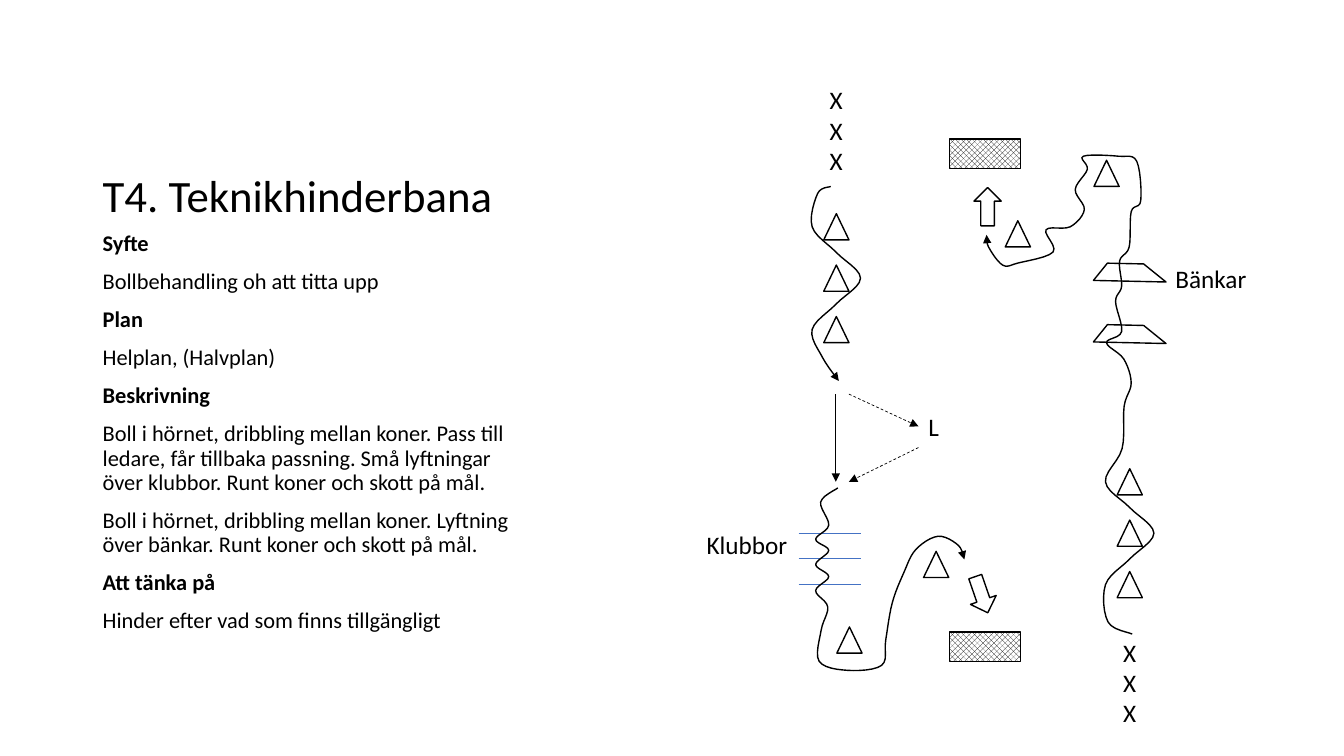
from itertools import pairwise

from lxml.etree import SubElement
from pptx import Presentation
from pptx.dml.color import RGBColor
from pptx.enum.dml import MSO_LINE, MSO_PATTERN
from pptx.enum.shapes import MSO_CONNECTOR, MSO_SHAPE as SHAPE
from pptx.enum.text import MSO_ANCHOR as ANCHOR, MSO_AUTO_SIZE as AUTO_SIZE
from pptx.oxml.ns import qn
from pptx.util import Inches, Pt

COLORS = {"ink": "000000", "paper": "FFFFFF", "stick": "4472C4"}
FONT = "Calibri"

DESCRIPTION = [
    ("Syfte", ["Bollbehandling oh att titta upp"]),
    ("Plan", ["Helplan, (Halvplan)"]),
    ("Beskrivning", [
        "Boll i hörnet, dribbling mellan koner. Pass till ledare, får tillbaka passning. "
        "Små lyftningar över klubbor. Runt koner och skott på mål.",
        "Boll i hörnet, dribbling mellan koner. Lyftning över bänkar. "
        "Runt koner och skott på mål."]),
    ("Att tänka på", ["Hinder efter vad som finns tillgängligt"]),
]

# Obstacles are given by left and top, in inches.
CONE_SIZE = (0.25, 0.26)
CONE_STEP = 0.51
LEFT_COLUMN = [(8.17, 2.12 + i * CONE_STEP) for i in range(3)]
RIGHT_COLUMN = [(11.08, 4.65 + i * CONE_STEP) for i in range(3)]
LOW_CONE, LOW_SHOT_CONE = (8.3, 6.22), (9.16, 5.47)
HIGH_CONE, HIGH_SHOT_CONE = (10.85, 1.59), (9.97, 2.19)
CONES = LEFT_COLUMN + RIGHT_COLUMN + [LOW_CONE, LOW_SHOT_CONE, HIGH_CONE, HIGH_SHOT_CONE]

BENCH_SIZE = (0.57, 0.44)
UPPER_BENCH, LOWER_BENCH = (10.92, 2.57), (10.92, 3.18)

STICK_LEFT, STICK_RIGHT = 7.92, 8.54
STICKS = [5.29, 5.54, 5.8]

SWING = 0.24       # how far a slalom swings out from the cones
CURVE_STEPS = 6    # line pieces between two waypoints


def rgb(name):
    return RGBColor.from_string(COLORS[name])


def around(corner, size, *offsets):
    """Waypoints given as offsets from the centre of an obstacle."""
    (left, top), (width, height) = corner, size
    return [(left + width / 2 + dx, top + height / 2 + dy) for dx, dy in offsets]


def slalom(cones):
    """Pass the cones left, right, left, crossing midway between neighbours."""
    sides = [around(cone, CONE_SIZE, (SWING if i % 2 else -SWING, 0))[0]
             for i, cone in enumerate(cones)]
    waypoints = sides[:1]
    for (x1, y1), (x2, y2) in pairwise(sides):
        waypoints += [((x1 + x2) / 2, (y1 + y2) / 2), (x2, y2)]
    return waypoints


def zigzag_over_sticks():
    """Swing right just above each stick and left just below it."""
    return [point for y in STICKS for point in ((8.22, y - 0.08), (8.09, y + 0.06))]


def smooth(waypoints):
    """Points of a Catmull-Rom curve through all waypoints."""
    padded = [waypoints[0], *waypoints, waypoints[-1]]
    curve = [waypoints[0]]
    for a, b, c, d in zip(padded, padded[1:], padded[2:], padded[3:]):
        for step in range(1, CURVE_STEPS + 1):
            t = step / CURVE_STEPS
            curve.append(tuple(
                q + t / 2 * (r - p + t * (2 * p - 5 * q + 4 * r - s
                                          + t * (3 * q - p - 3 * r + s)))
                for p, q, r, s in zip(a, b, c, d)))
    return curve


def left_start_run():
    return [(8.24, 1.85), (8.11, 1.92), *slalom(LEFT_COLUMN), (8.16, 3.55), (8.32, 3.78)]


def left_shot_run():
    round_low_cone = around(LOW_CONE, CONE_SIZE, (-0.28, -0.1), (-0.3, 0.21),
                            (-0.02, 0.3), (0.32, 0.25), (0.36, 0))
    to_shot = around(LOW_SHOT_CONE, CONE_SIZE, (-0.32, 0.08), (-0.2, -0.15),
                     (0.02, -0.28), (0.22, -0.19), (0.28, -0.05))
    return [(8.31, 4.84), (8.14, 4.98), *zigzag_over_sticks(), (8.21, 6.02),
            *round_low_cone, (8.85, 5.98), *to_shot]


def right_run():
    over_lower = around(LOWER_BENCH, BENCH_SIZE, (-0.06, 0.16), (-0.23, 0), (-0.08, -0.11))
    over_upper = around(UPPER_BENCH, BENCH_SIZE, (-0.14, 0.2), (-0.08, 0.05), (-0.1, -0.2))
    round_high_cone = around(HIGH_CONE, CONE_SIZE, (0.34, 0.27), (0.3, -0.12), (0.12, -0.17),
                             (-0.23, -0.17), (-0.19, -0.04), (-0.31, 0.16), (-0.22, 0.36))
    to_shot = around(HIGH_SHOT_CONE, CONE_SIZE, (0.52, -0.07), (0.28, -0.04), (0.35, 0.18),
                     (0, 0.29), (-0.15, 0.31), (-0.29, 0.13), (-0.31, 0.01))
    return [(11.23, 6.29), (10.99, 6.17), *slalom(RIGHT_COLUMN[::-1]), (11.13, 4.45),
            (11.15, 4.03), (11.22, 3.8), *over_lower, *over_upper, (11.2, 2.45),
            (11.22, 2.1), *round_high_cone, *to_shot]


def add_arrowhead(line):
    """Put a triangle at the far end of a line whose width and colour are set."""
    SubElement(line._get_or_add_ln(), qn("a:tailEnd"), type="triangle")


def add_text(slide, paragraphs, left, top, width, height, size=18, bold_lines=(),
             wrap=False, anchor=ANCHOR.TOP, spacing=None, before=None):
    box = slide.shapes.add_textbox(Inches(left), Inches(top), Inches(width), Inches(height))
    frame = box.text_frame
    frame.word_wrap = wrap
    frame.auto_size = AUTO_SIZE.NONE if wrap else AUTO_SIZE.SHAPE_TO_FIT_TEXT
    frame.vertical_anchor = anchor
    for i, words in enumerate(paragraphs):
        paragraph = frame.add_paragraph() if i else frame.paragraphs[0]
        paragraph.line_spacing, paragraph.space_before = spacing, before
        run = paragraph.add_run()
        run.text = words
        run.font.name, run.font.size = FONT, Pt(size)
        run.font.bold = words in bold_lines
        run.font.color.rgb = rgb("ink")
    return box


def add_outlined(slide, kind, corner, size, rotation=0):
    shape = slide.shapes.add_shape(kind, *map(Inches, (*corner, *size)))
    shape.rotation = rotation
    shape.shadow.inherit = False
    shape.fill.solid()
    shape.fill.fore_color.rgb = rgb("paper")
    shape.line.color.rgb = rgb("ink")
    shape.line.width = Pt(1)
    return shape


def add_goal(slide, top):
    fill = add_outlined(slide, SHAPE.RECTANGLE, (9.42, top), (0.7, 0.29)).fill
    fill.patterned()
    fill.pattern = MSO_PATTERN.OUTLINED_DIAMOND
    fill.fore_color.rgb, fill.back_color.rgb = rgb("ink"), rgb("paper")


def add_dribble(slide, waypoints):
    """Draw the winding run of a player with the ball."""
    start, *rest = [(Inches(x), Inches(y)) for x, y in smooth(waypoints)]
    builder = slide.shapes.build_freeform(*start)
    builder.add_line_segments(rest, close=False)
    run = builder.convert_to_shape()
    run.shadow.inherit = False
    run.fill.background()
    run.line.color.rgb = rgb("ink")
    run.line.width = Pt(1)
    add_arrowhead(run.line)


def add_line(slide, x1, y1, x2, y2, color="ink", dashed=False, arrow=True):
    connector = slide.shapes.add_connector(
        MSO_CONNECTOR.STRAIGHT, *map(Inches, (x1, y1, x2, y2)))
    connector.line.color.rgb = rgb(color)
    connector.line.width = Pt(0.5)
    if dashed:
        connector.line.dash_style = MSO_LINE.DASH
    if arrow:
        add_arrowhead(connector.line)
    SubElement(connector._element.spPr, qn("a:effectLst"))
    return connector


def main():
    deck = Presentation()
    deck.slide_width, deck.slide_height = Inches(13.33), Inches(7.5)
    slide = deck.slides.add_slide(deck.slide_layouts[6])

    add_text(slide, ["T4. Teknikhinderbana"], 0.92, 0.5, 4.3, 1.75, size=32, wrap=True,
             anchor=ANCHOR.BOTTOM, spacing=0.9)
    headings = [heading for heading, _ in DESCRIPTION]
    lines = [line for heading, body in DESCRIPTION for line in (heading, *body)]
    add_text(slide, lines, 0.92, 2.25, 4.3, 4.17, size=16, bold_lines=headings, wrap=True,
             spacing=0.9, before=Pt(10))

    for left, top in ((8.13, 0.79), (11.04, 6.27)):
        add_text(slide, ["X"] * 3, left, top, 0.33, 1.01)
    leader = add_text(slide, ["L"], 9.11, 4.03, 0.31, 0.4)
    add_text(slide, ["Klubbor"], 6.91, 5.2, 1.01, 0.4)
    add_text(slide, ["Bänkar"], 11.56, 2.56, 0.91, 0.4)

    for top in (1.38, 6.27):
        add_goal(slide, top)
    for cone in CONES:
        add_outlined(slide, SHAPE.ISOSCELES_TRIANGLE, cone, CONE_SIZE)
    for bench in (UPPER_BENCH, LOWER_BENCH):
        add_outlined(slide, SHAPE.DIAGONAL_STRIPE, bench, BENCH_SIZE, rotation=38.9)
    for corner, rotation in (((9.6, 5.71), 340.9), ((9.66, 1.86), 180)):
        add_outlined(slide, SHAPE.DOWN_ARROW, corner, (0.27, 0.38), rotation)

    add_line(slide, 8.42, 3.91, 9.11, 4.23, dashed=True).end_connect(leader, 1)
    add_line(slide, 8.29, 3.91, 8.29, 4.78)
    add_line(slide, 9.11, 4.44, 8.42, 4.78, dashed=True)
    for y in STICKS:
        add_line(slide, STICK_LEFT, y, STICK_RIGHT, y, color="stick", arrow=False)
    for run in (left_start_run, left_shot_run, right_run):
        add_dribble(slide, run())

    deck.save("out.pptx")


if __name__ == "__main__":
    main()
